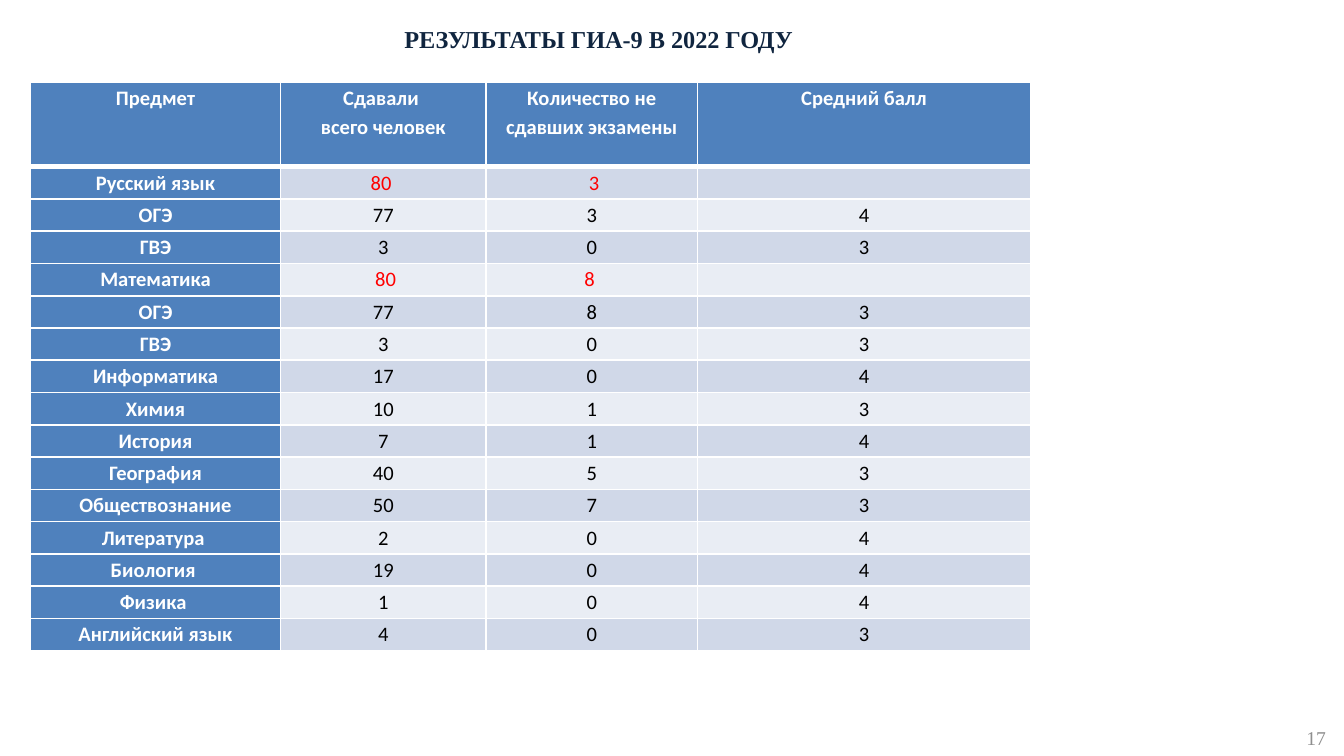
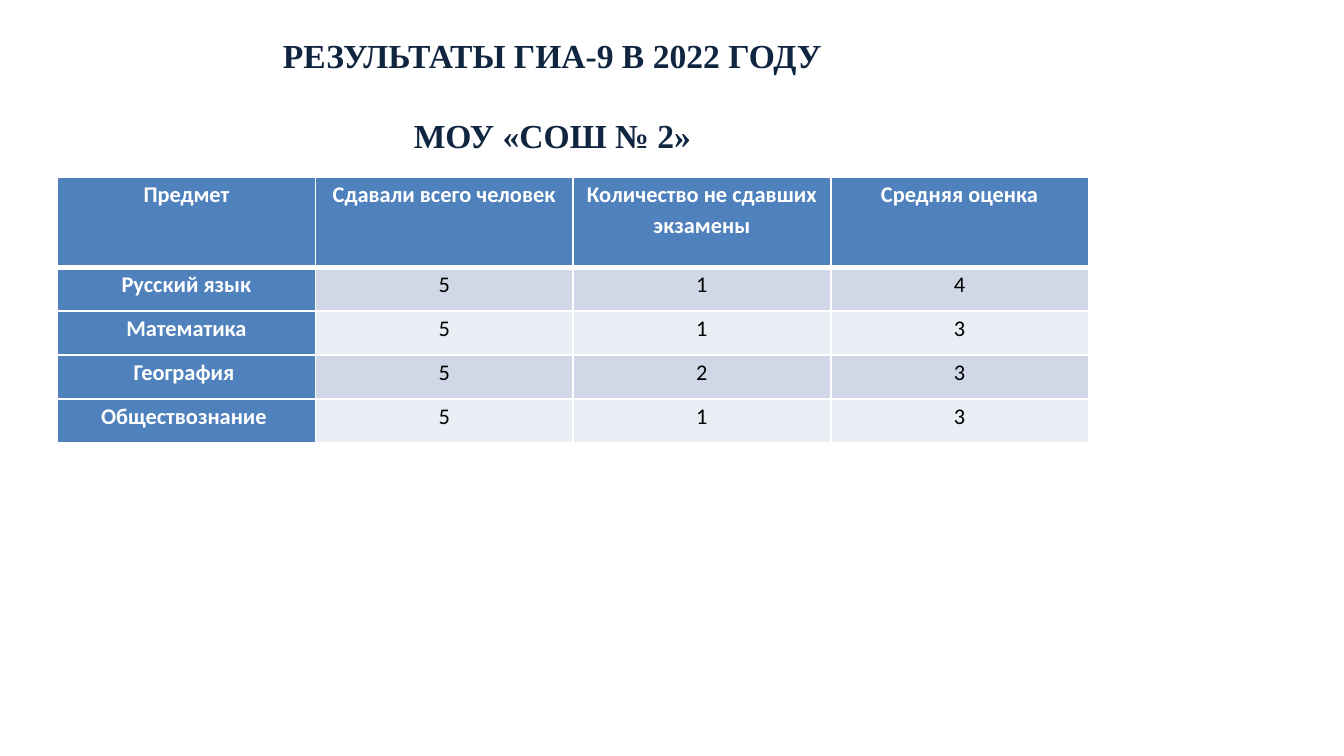
"""Builds two slides with tables of the GIA-9 exam results for 2022."""
from lxml import etree
from pptx import Presentation
from pptx import util as u
from pptx.dml.color import RGBColor
from pptx.enum import text
from pptx.oxml.ns import qn

NAVY = RGBColor(0x10, 0x25, 0x3F)
BLUE = RGBColor(0x4F, 0x81, 0xBD)
BANDS = (RGBColor(0xE9, 0xED, 0xF4), RGBColor(0xD0, 0xD8, 0xE8))
WHITE = RGBColor(0xFF, 0xFF, 0xFF)
BLACK = RGBColor(0x00, 0x00, 0x00)
RED = RGBColor(0xFF, 0x00, 0x00)
GREY = RGBColor(0x8F, 0x8F, 0x8F)
SERIF, SANS = "Times New Roman", "Calibri"
TITLE = "РЕЗУЛЬТАТЫ ГИА-9 В 2022 ГОДУ"

SLIDES = [
    dict(
        title=TITLE, title_box=(0.53, 0.46, 21.56, 0.64), title_size=13, inset=(0, 0),
        table_at=(0.58, 1.55), cols=(4.72, 3.89, 3.99, 6.3), head_h=1.6, row_h=0.61,
        size=11, red_rows=(1, 4), number="17",
        rows=[
            ("Предмет", "Сдавали \nвсего человек", "Количество не сдавших экзамены", "Средний балл"),
            ("Русский язык", "80 ", " 3", ""),
            ("ОГЭ", "77", "3", "4"),
            ("ГВЭ", "3", "0", "3"),
            ("Математика", " 80", "8 ", ""),
            ("ОГЭ", "77", "8", "3"),
            ("ГВЭ", "3", "0", "3"),
            ("Информатика", "17", "0", "4"),
            ("Химия", "10", "1", "3"),
            ("История", "7", "1", "4"),
            ("География", "40", "5", "3"),
            ("Обществознание", "50", "7", "3"),
            ("Литература ", "2", "0", "4"),
            ("Биология ", "19", "0", "4"),
            ("Физика ", "1", "0", "4"),
            ("Английский язык", "4", "0", "3"),
        ],
    ),
    dict(
        title=TITLE + "\nМОУ «СОШ № 2»", title_box=(4.09, 0.53, 12.7, 7.09), title_size=18,
        inset=(0.25, 0.13), table_at=(1.09, 3.35), cols=(4.87,) * 4, head_h=1.7, row_h=0.83,
        size=12, red_rows=(), number=None,
        rows=[
            ("Предмет", "Сдавали всего человек", "Количество не сдавших экзамены", "Средняя оценка"),
            ("Русский язык", "5", "1", "4"),
            ("Математика", "5", "1", "3"),
            ("География ", "5", "2", "3"),
            ("Обществознание ", "5", "1", "3"),
        ],
    ),
]


def write(tf, content, font, align=text.PP_ALIGN.CENTER, **spacing):
    tf.text = content
    for p in tf.paragraphs:
        p.alignment = align
        for name, value in spacing.items():
            setattr(p, name, value)
        for r in p.runs:
            r.font.color.rgb = font["color"]
            for name in ("name", "size", "bold"):
                setattr(r.font, name, font[name])
        if not p.runs:
            etree.SubElement(p._p, qn("a:endParaRPr"), sz=str(int(font["size"].pt * 100)))


def set_borders(cell, widths):
    tc_pr = cell._tc.get_or_add_tcPr()
    for side, width in zip("LRTB", widths):
        ln = etree.SubElement(tc_pr, qn("a:ln" + side), w=str(u.Pt(width)))
        fill = etree.SubElement(ln, qn("a:solidFill"))
        etree.SubElement(fill, qn("a:srgbClr"), val=str(WHITE))


prs = Presentation()
prs.slide_width, prs.slide_height = u.Cm(25.4), u.Cm(14.29)

for d in SLIDES:
    s = prs.slides.add_slide(prs.slide_layouts[5])

    sp = s.shapes.title
    sp.left, sp.top, sp.width, sp.height = map(u.Cm, d["title_box"])
    tf = sp.text_frame
    side, edge = map(u.Cm, d["inset"])
    fmt = dict(margin_left=side, margin_right=side, margin_top=edge, margin_bottom=edge,
               word_wrap=True, auto_size=text.MSO_AUTO_SIZE.NONE,
               vertical_anchor=text.MSO_ANCHOR.TOP)
    for name, value in fmt.items():
        setattr(tf, name, value)
    write(tf, d["title"], dict(name=SERIF, size=u.Pt(d["title_size"]), bold=True, color=NAVY),
          space_after=u.Pt(21))

    rows, cols = d["rows"], d["cols"]
    heights = [d["head_h"]] + [d["row_h"]] * (len(rows) - 1)
    left, top = d["table_at"]
    tbl = s.shapes.add_table(len(rows), len(cols), u.Cm(left), u.Cm(top),
                             u.Cm(sum(cols)), u.Cm(sum(heights))).table
    for col, width in zip(tbl.columns, cols):
        col.width = u.Cm(width)
    for i, (row, height) in enumerate(zip(rows, heights)):
        tbl.rows[i].height = u.Cm(height)
        for j, value in enumerate(row):
            cell = tbl.cell(i, j)
            header = i == 0 or j == 0
            fmt = dict(margin_left=u.Cm(0.18), margin_right=u.Cm(0.18),
                       margin_top=0, margin_bottom=0)
            for name, margin in fmt.items():
                setattr(cell, name, margin)
            set_borders(cell, (1, 1, 3 if i == 1 else 1, 3 if i == 0 else 1))
            cell.fill.solid()
            cell.fill.fore_color.rgb = BLUE if header else BANDS[i % 2]
            color = WHITE if header else RED if i in d["red_rows"] else BLACK
            write(cell.text_frame, value,
                  dict(name=SANS, size=u.Pt(d["size"]), bold=header, color=color),
                  line_spacing=1.15)

    if d["number"]:
        sp = s.shapes.add_textbox(u.Cm(24.69), u.Cm(13.72), u.Cm(0.43), u.Cm(0.36))
        tf = sp.text_frame
        fmt = dict(margin_left=0, margin_right=0, margin_top=0, margin_bottom=0, word_wrap=True)
        for name, value in fmt.items():
            setattr(tf, name, value)
        write(tf, d["number"], dict(name=SERIF, size=u.Pt(10.5), bold=False, color=GREY),
              text.PP_ALIGN.LEFT)

prs.save("out.pptx")
